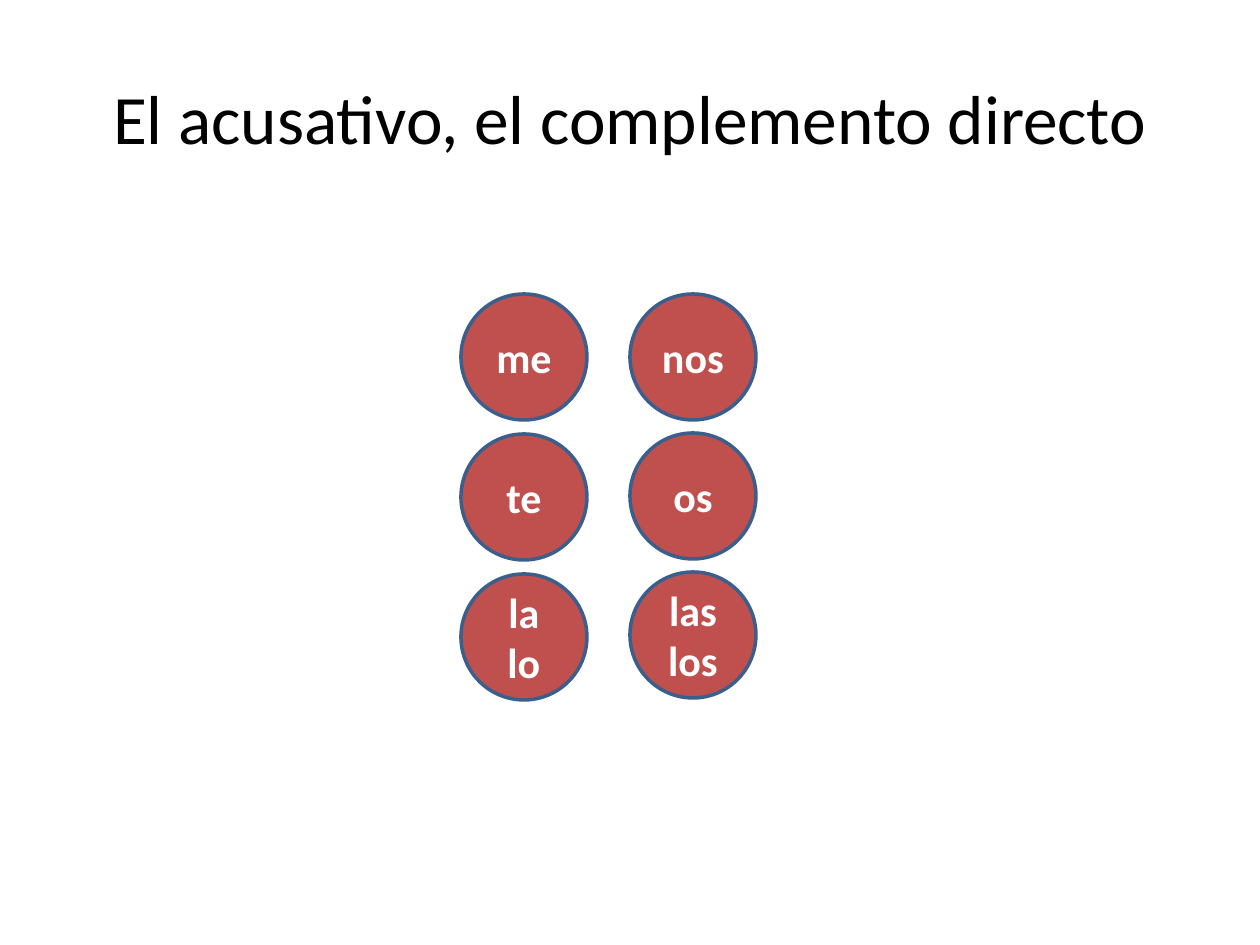
from pptx import Presentation
from pptx.dml.color import RGBColor
from pptx.enum.shapes import MSO_SHAPE
from pptx.enum.text import MSO_ANCHOR, MSO_AUTO_SIZE, PP_ALIGN
from pptx.util import Emu, Pt

OVAL = MSO_SHAPE.OVAL
MIDDLE = MSO_ANCHOR.MIDDLE
NO_AUTOFIT = MSO_AUTO_SIZE.NONE
CENTER = PP_ALIGN.CENTER

BLACK = RGBColor(0x00, 0x00, 0x00)
WHITE = RGBColor(0xFF, 0xFF, 0xFF)
RED = RGBColor(0xC0, 0x50, 0x4D)
BLUE = RGBColor(0x3A, 0x5F, 0x8C)

PIXELS_PER_INCH = 126
TITLE_FORMAT = {"name": "Calibri", "size": Pt(39.6), "bold": False}
PRONOUN_FORMAT = {"name": "Calibri", "size": Pt(24), "bold": True}

DIAMETER = 126
FIRST_TOP = 294
PRONOUN_COLUMNS = [
    (461, 140, ["me", "te", "la lo"]),
    (630, 139, ["nos", "os", "las los"]),
]


def px(length):
    return Emu(round(length * 914400 / PIXELS_PER_INCH))


class SlideBuilder:
    """Holds the text and shape style and adds elements to the current slide."""

    def __init__(self, presentation):
        self.slide = presentation.slides.add_slide(presentation.slide_layouts[5])

    def set_text(self, shape, text, font_format, color):
        frame = shape.text_frame
        frame.text = text
        frame.word_wrap = True
        frame.auto_size = NO_AUTOFIT
        frame.vertical_anchor = MIDDLE
        paragraph = frame.paragraphs[0]
        paragraph.alignment = CENTER
        font = paragraph.runs[0].font
        for name, value in font_format.items():
            setattr(font, name, value)
        font.color.rgb = color

    def title(self, text, left, top, width, height):
        shape = self.slide.shapes.title
        box = {"left": left, "top": top, "width": width, "height": height}
        for name, value in box.items():
            setattr(shape, name, px(value))
        self.set_text(shape, text, TITLE_FORMAT, BLACK)

    def circle(self, text, left, top):
        shape = self.slide.shapes.add_shape(
            OVAL, px(left), px(top), px(DIAMETER), px(DIAMETER)
        )
        shape.shadow.inherit = False
        shape.fill.solid()
        shape.fill.fore_color.rgb = RED
        shape.line.color.rgb = BLUE
        shape.line.width = Pt(2)
        self.set_text(shape, text, PRONOUN_FORMAT, WHITE)


def main():
    presentation = Presentation()
    presentation.slide_width = px(1260)
    presentation.slide_height = px(945)
    builder = SlideBuilder(presentation)
    builder.title("El acusativo, el complemento directo", 63, 38, 1134, 157)
    for left, pitch, pronouns in PRONOUN_COLUMNS:
        for row, pronoun in enumerate(pronouns):
            builder.circle(pronoun, left, FIRST_TOP + row * pitch)
    presentation.save("out.pptx")


if __name__ == "__main__":
    main()
